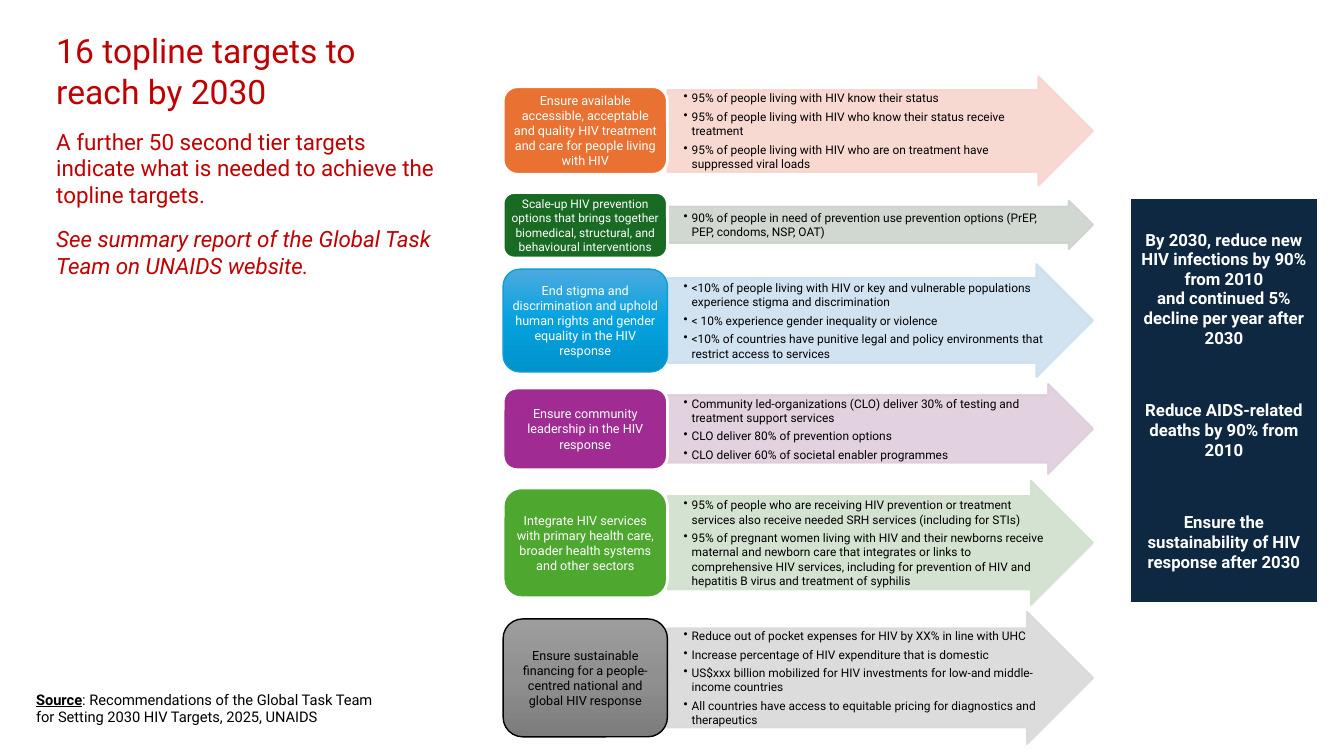
from copy import deepcopy

from lxml.etree import SubElement
from pptx import Presentation
from pptx.dml.color import RGBColor
from pptx.enum.shapes import MSO_SHAPE
from pptx.enum.text import MSO_ANCHOR, MSO_AUTO_SIZE, PP_ALIGN
from pptx.oxml.ns import qn
from pptx.util import Pt

SCALE = 9144
FACE = "Roboto"
WHITE = RGBColor(0xFF, 0xFF, 0xFF)
BLACK = RGBColor(0x00, 0x00, 0x00)
RED = RGBColor(0xC0, 0x00, 0x00)
NAVY = RGBColor(0x0E, 0x28, 0x41)
ORANGE = RGBColor(0xE9, 0x71, 0x32)
PEACH = RGBColor(0xF7, 0xD5, 0xCE)
FOREST = RGBColor(0x19, 0x6B, 0x24)
SAGE = RGBColor(0xCC, 0xD4, 0xCD)
AZURE = RGBColor(0x0F, 0x9E, 0xD5)
SKY = RGBColor(0xCC, 0xDF, 0xEF)
PURPLE = RGBColor(0xA0, 0x2B, 0x93)
MAUVE = RGBColor(0xDF, 0xCD, 0xDC)
GREEN = RGBColor(0x4E, 0xA7, 0x2E)
MINT = RGBColor(0xD0, 0xE1, 0xCD)
SILVER = RGBColor(0xD9, 0xD9, 0xD9)
BLUES = [RGBColor(0x4C, 0xAA, 0xDF), RGBColor(0x05, 0xA2, 0xDF), RGBColor(0x00, 0x92, 0xCB)]
GREYS = [RGBColor(0x9D, 0x9D, 0x9D), RGBColor(0x90, 0x90, 0x90), RGBColor(0x7C, 0x7C, 0x7C)]

CENTRE = {"alignment": PP_ALIGN.CENTER}
POINT = {"level": 1, "space_after": Pt(3)}

ROWS = [
    {"card": (86, 87), "arrow": (76, 108), "fill": [ORANGE], "tint": PEACH,
     "goal": "Ensure available accessible, acceptable and quality HIV treatment and care for people living with HIV",
     "points": ["95% of people living with HIV know their status",
                "95% of people living with HIV who know their status receive treatment",
                "95% of people living with HIV who are on treatment have suppressed viral loads"]},
    {"card": (191, 65), "arrow": (199, 48), "fill": [FOREST], "tint": SAGE, "size": 8.5,
     "goal": "Scale-up HIV prevention options that brings together biomedical, structural, and behavioural interventions",
     "points": ["90% of people in need of prevention use prevention options (PrEP,\nPEP, condoms, NSP, OAT)"]},
    {"card": (267, 102), "arrow": (262, 112), "fill": BLUES, "tint": SKY, "edge": (AZURE, 1),
     "goal": "End stigma and discrimination and uphold human rights and gender equality in the HIV response",
     "points": ["<10% of people living with HIV or key and vulnerable populations experience stigma and discrimination",
                "< 10% experience gender inequality or violence",
                "<10% of countries have punitive legal and policy environments that restrict access to services"]},
    {"card": (385, 81), "arrow": (381, 89), "fill": [PURPLE], "tint": MAUVE,
     "goal": "Ensure community leadership in the HIV response",
     "points": ["Community led-organizations (CLO) deliver 30% of testing and treatment support services",
                "CLO deliver 80% of prevention options",
                "CLO deliver 60% of societal enabler programmes"]},
    {"card": (484, 109), "arrow": (477, 123), "fill": [GREEN], "tint": MINT,
     "goal": "Integrate HIV services with primary health care, broader health systems and other sectors",
     "points": ["95% of people who are receiving HIV prevention or treatment services also receive needed SRH services "
                "(including for STIs)",
                "95% of pregnant women living with HIV and their newborns receive maternal and newborn care that "
                "integrates or links to comprehensive HIV services, including for prevention of HIV and hepatitis B "
                "virus and treatment of syphilis"]},
    {"card": (614, 117), "arrow": (607, 131), "fill": GREYS, "tint": SILVER, "edge": (BLACK, 1), "ink": BLACK,
     "goal": "Ensure sustainable financing for a people-centred national and global HIV response",
     "points": ["Reduce out of pocket expenses for HIV by XX% in line with UHC",
                "Increase percentage of HIV expenditure that is domestic",
                "US$xxx billion mobilized for HIV investments for low-and middle-income countries",
                "All countries have access to equitable pricing for diagnostics and therapeutics"]},
]

AIMS = ["By 2030, reduce new HIV infections by 90% from 2010\nand continued 5% decline per year after 2030",
        "Reduce AIDS-related deaths by 90% from 2010",
        "Ensure the sustainability of HIV response after 2030"]

INTRO = [("16 topline targets to reach by 2030", 24, {}),
         ("A further 50 second tier targets indicate what is needed to achieve the topline targets.", 16, {}),
         ("See summary report of the Global Task Team on UNAIDS website.", 16, {"italic": True})]


def px(num):
    return num * SCALE


def apply(item, look):
    for name, value in look.items():
        setattr(item, name, value)


def paint(run, size, ink, look):
    apply(run.font, {"name": FACE, "size": Pt(size), **look})
    run.font.color.rgb = ink


def set_frame(frame, pads):
    left, top, right, base = map(px, pads)
    apply(frame, {"word_wrap": True, "vertical_anchor": MSO_ANCHOR.MIDDLE, "margin_left": left,
                  "margin_top": top, "margin_right": right, "margin_bottom": base})


def add_para(frame, text, size, ink, form, look=None, dot=False, lead=0):
    first = not frame.text
    para = frame.paragraphs[0] if first else frame.add_paragraph()
    para.text = text
    if dot:
        props = para._p.get_or_add_pPr()
        props.set("marL", str(px(8)))
        props.set("indent", str(px(-8)))
        SubElement(props, qn("a:buChar")).set("char", "•")
    apply(para, form)
    if lead and not first:
        para.space_before = Pt(lead)
    for run in para.runs:
        paint(run, size, ink, look or {})
    for gap in para._p.findall(qn("a:br")):
        gap.append(deepcopy(para.runs[0]._r.rPr))


def add_form(slide, kind, area, fill, edge, width):
    shape = slide.shapes.add_shape(kind, *map(px, area))
    shape.shadow.inherit = False
    if len(fill) == 1:
        shape.fill.solid()
        shape.fill.fore_color.rgb = fill[0]
    else:
        shape.fill.gradient()
        shape.fill.gradient_angle = 270
        stops = shape._element.spPr.find(".//" + qn("a:gsLst"))
        stops.append(deepcopy(stops[0]))
        for num, stop in enumerate(shape.fill.gradient_stops):
            stop.position = num / 2
            stop.color.rgb = fill[num]
    shape.line.color.rgb = edge
    shape.line.width = Pt(width)
    return shape


def add_card(slide, row):
    top, height = row["card"]
    edge, width = row.get("edge", (WHITE, 2))
    card = add_form(slide, MSO_SHAPE.ROUNDED_RECTANGLE, (499, top, 163, height), row["fill"], edge, width)
    set_frame(card.text_frame, (4, 4, 4, 4))
    add_para(card.text_frame, row["goal"], row.get("size", 9), row.get("ink", WHITE), CENTRE)


def add_arrow(slide, row):
    top, height = row["arrow"]
    tint = row["tint"]
    arrow = add_form(slide, MSO_SHAPE.RIGHT_ARROW, (662, top, 422, height), [tint], tint, 1.5)
    arrow.adjustments[0] = 0.75
    for color in arrow._element.spPr.iter(qn("a:srgbClr")):
        SubElement(color, qn("a:alpha")).set("val", "90000")
    set_frame(arrow.text_frame, (16, 8, 0, 8))
    for point in row["points"]:
        add_para(arrow.text_frame, point, 8.5, BLACK, {**POINT, "alignment": PP_ALIGN.LEFT}, dot=True)


def add_panel(slide):
    panel = add_form(slide, MSO_SHAPE.RECTANGLE, (1121, 197, 186, 401), [NAVY], WHITE, 1)
    set_frame(panel.text_frame, (8, 4, 8, 4))
    for aim in AIMS:
        add_para(panel.text_frame, aim, 12, WHITE, {**CENTRE, "line_spacing": Pt(14)}, {"bold": True}, lead=38)


def add_box(slide, area):
    frame = slide.shapes.add_textbox(*map(px, area)).text_frame
    apply(frame, {"word_wrap": True, "auto_size": MSO_AUTO_SIZE.SHAPE_TO_FIT_TEXT})
    return frame


def add_intro(slide):
    frame = add_box(slide, (46, 25, 407, 259))
    for text, size, look in INTRO:
        add_para(frame, text, size, RED, {"space_after": Pt(6)}, look, lead=6)


def add_source(slide):
    para = add_box(slide, (26, 680, 367, 45)).paragraphs[0]
    note = ": Recommendations of the Global Task Team for Setting 2030 HIV Targets, 2025, UNAIDS"
    for text, look in [("Source", {"bold": True, "underline": True}), (note, {})]:
        run = para.add_run()
        run.text = text
        paint(run, 10.5, BLACK, look)


def main():
    deck = Presentation()
    apply(deck, {"slide_width": px(1333), "slide_height": px(750)})
    slide = deck.slides.add_slide(deck.slide_layouts[6])
    for row in ROWS:
        add_arrow(slide, row)
        add_card(slide, row)
    add_panel(slide)
    add_intro(slide)
    add_source(slide)
    deck.save("out.pptx")


if __name__ == "__main__":
    main()
